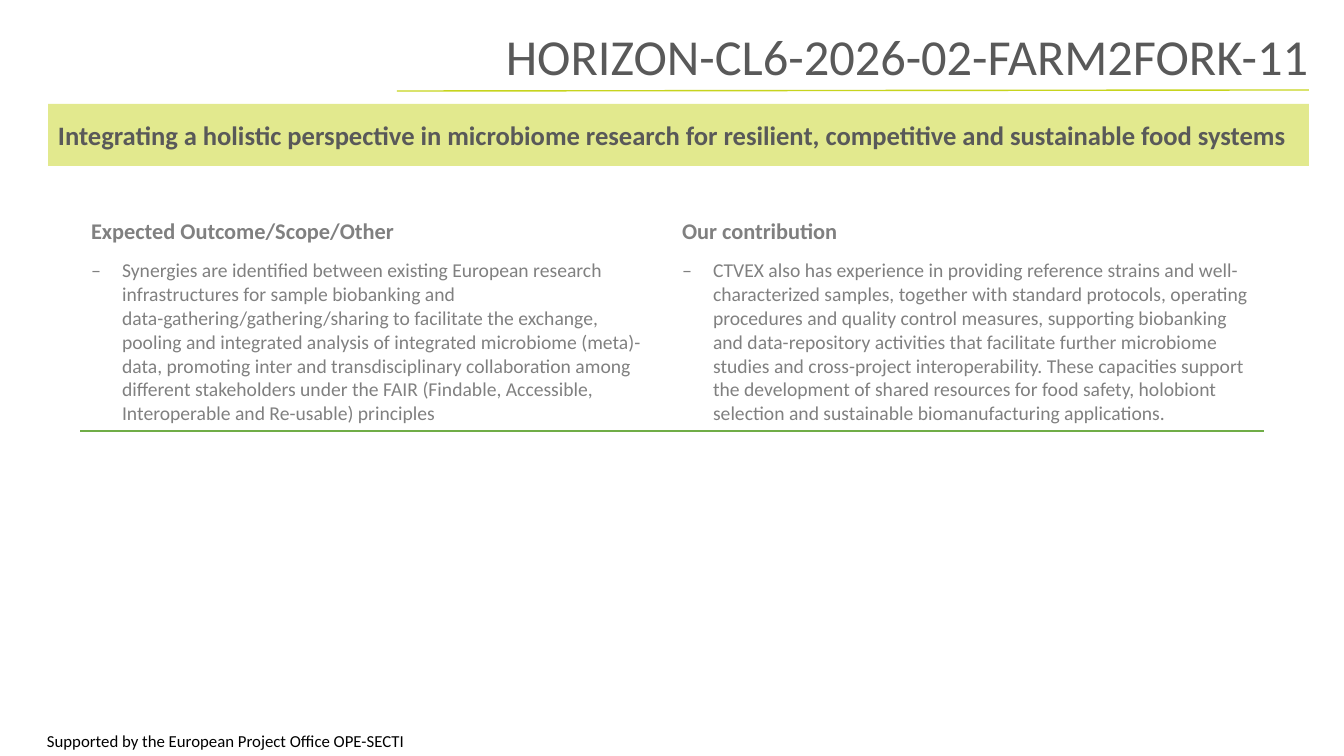
from lxml.etree import SubElement
from pptx import Presentation
from pptx.dml.color import RGBColor
from pptx.enum.shapes import MSO_CONNECTOR, MSO_SHAPE
from pptx.enum.text import MSO_ANCHOR, MSO_AUTO_SIZE, PP_ALIGN
from pptx.oxml.ns import qn
from pptx.util import Pt

# Content
TITLE = "HORIZON-CL6-2026-02-FARM2FORK-11"
TOPIC = ("Integrating a holistic perspective in microbiome research for resilient, "
         "competitive and sustainable food systems")
FOOTER = "Supported by the European Project Office OPE-SECTI"
COLUMNS = [
    ("Expected Outcome/Scope/Other",
     "Synergies are identified between existing European research infrastructures for sample "
     "biobanking and data-gathering/gathering/sharing to facilitate the exchange, pooling and "
     "integrated analysis of integrated microbiome (meta)-data, promoting inter and "
     "transdisciplinary collaboration among different stakeholders under the FAIR (Findable, "
     "Accessible, Interoperable and Re-usable) principles"),
    ("Our contribution",
     "CTVEX also has experience in providing reference strains and well-characterized samples, "
     "together with standard protocols, operating procedures and quality control measures, "
     "supporting biobanking and data-repository activities that facilitate further microbiome "
     "studies and cross-project interoperability. These capacities support the development of "
     "shared resources for food safety, holobiont selection and sustainable biomanufacturing "
     "applications."),
]

# Formats and geometry in px
COLORS = {"lime": "C7D41E", "green": "70AD47", "dark": "595959", "grey": "808080",
          "black": "000000"}
FORMATS = {
    "title": {"size": 36, "bold": False, "color": "dark"},
    "topic": {"size": 19, "bold": True, "color": "dark"},
    "heading": {"size": 16, "bold": True, "color": "grey"},
    "body": {"size": 14, "bold": False, "color": "grey"},
    "footer": {"size": 12, "bold": False, "color": "black"},
}
SLIDE_SIZE = (1344, 756)
TITLE_BOX = (387, 18, 932, 73)
TITLE_RULE = (397, 91, 1309, 90)
TOPIC_BOX = (48, 104, 1261, 62)
TABLE_BOX = (81, 213, 1182, 217)
HEADING_HEIGHT = 41
FOOTER_BOX = (37, 724, 391, 32)
BULLET_INDENT = 31
SCALE = 914400 / 100.8


def emu(*lengths):
    return [round(length * SCALE) for length in lengths]


def color(name):
    return RGBColor.from_string(COLORS[name])


def write(frame, text, style, **paragraph_format):
    frame.word_wrap = True
    paragraph = frame.paragraphs[0]
    paragraph.text = text
    for name, value in paragraph_format.items():
        setattr(paragraph, name, value)
    values = FORMATS[style]
    font = paragraph.runs[0].font
    for name, value in {"name": "Calibri", "size": Pt(values["size"]),
                        "bold": values["bold"]}.items():
        setattr(font, name, value)
    font.color.rgb = color(values["color"])
    return paragraph


def add_dash(paragraph):
    indent, = emu(BULLET_INDENT)
    properties = paragraph._p.get_or_add_pPr()
    properties.set("marL", str(indent))
    properties.set("indent", str(-indent))
    SubElement(properties, qn("a:buFont"), typeface="Calibri")
    SubElement(properties, qn("a:buChar"), char="‒")


def add_bottom_border(cell):
    properties = cell._tc.get_or_add_tcPr()
    border = SubElement(properties, qn("a:lnB"), w=str(Pt(1)))
    fill = SubElement(border, qn("a:solidFill"))
    SubElement(fill, qn("a:srgbClr"), val=COLORS["green"])
    properties.insert(0, border)


def main():
    presentation = Presentation()
    presentation.slide_width, presentation.slide_height = emu(*SLIDE_SIZE)
    slide = presentation.slides.add_slide(presentation.slide_layouts[5])
    shapes = slide.shapes

    # Title and its rule
    title = shapes.title
    title.left, title.top, title.width, title.height = emu(*TITLE_BOX)
    title.text_frame.auto_size = MSO_AUTO_SIZE.NONE
    title.text_frame.vertical_anchor = MSO_ANCHOR.BOTTOM
    write(title.text_frame, TITLE, "title", alignment=PP_ALIGN.RIGHT, line_spacing=0.9)
    rule = shapes.add_connector(MSO_CONNECTOR.STRAIGHT, *emu(*TITLE_RULE))
    rule.line.color.rgb = color("lime")
    rule.line.width = Pt(1)
    SubElement(rule._element.spPr, qn("a:effectLst"))

    # Topic band
    band = shapes.add_shape(MSO_SHAPE.RECTANGLE, *emu(*TOPIC_BOX))
    band.shadow.inherit = False
    band.fill.solid()
    band.fill.fore_color.rgb = color("lime")
    tint = band._element.spPr.find(qn("a:solidFill"))[0]
    SubElement(tint, qn("a:alpha"), val="50000")
    band.line.fill.background()
    band.text_frame.vertical_anchor = MSO_ANCHOR.MIDDLE
    write(band.text_frame, TOPIC, "topic", alignment=PP_ALIGN.LEFT)

    # Outcome and contribution table
    table = shapes.add_table(2, len(COLUMNS), *emu(*TABLE_BOX)).table
    table.first_row = table.horz_banding = False
    heights = emu(HEADING_HEIGHT, TABLE_BOX[3] - HEADING_HEIGHT)
    for row, height in zip(table.rows, heights):
        row.height = height
    for index, (heading, body) in enumerate(COLUMNS):
        heading_cell, body_cell = table.cell(0, index), table.cell(1, index)
        write(heading_cell.text_frame, heading, "heading")
        add_dash(write(body_cell.text_frame, body, "body"))
        for cell in (heading_cell, body_cell):
            cell.fill.background()
        add_bottom_border(body_cell)

    # Footer
    footer = shapes.add_textbox(*emu(*FOOTER_BOX))
    write(footer.text_frame, FOOTER, "footer", line_spacing=1.1)

    presentation.save("out.pptx")


if __name__ == "__main__":
    main()
